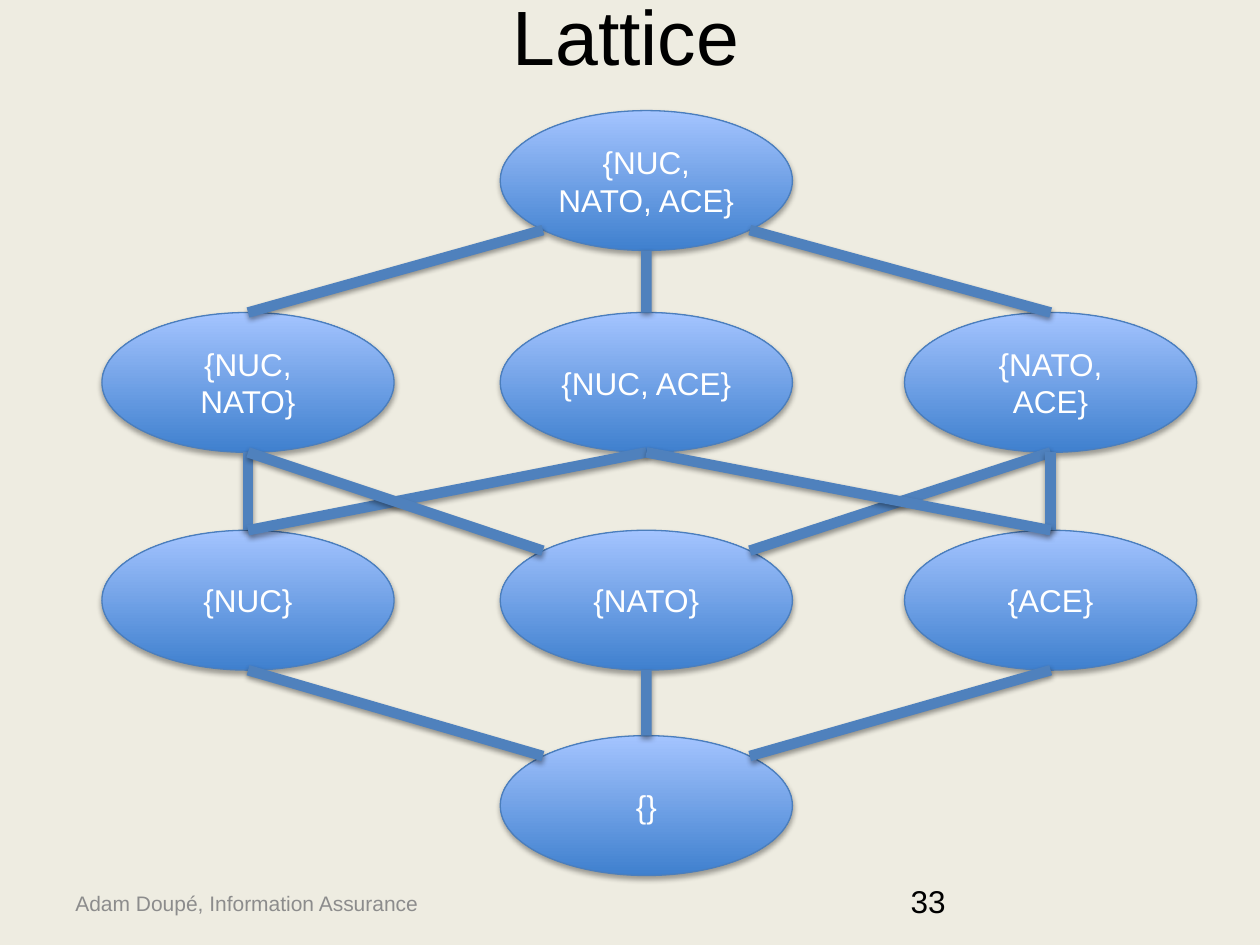
from lxml import etree
from pptx import Presentation
from pptx.dml.color import RGBColor
from pptx.enum.shapes import MSO_CONNECTOR, MSO_SHAPE
from pptx.enum.text import MSO_ANCHOR, PP_ALIGN
from pptx.oxml.ns import qn
from pptx.util import Cm, Pt

OVAL = MSO_SHAPE.OVAL
STRAIGHT = MSO_CONNECTOR.STRAIGHT
TOP_ANCHOR, MIDDLE_ANCHOR = MSO_ANCHOR.TOP, MSO_ANCHOR.MIDDLE
LEFT, CENTER = PP_ALIGN.LEFT, PP_ALIGN.CENTER

FONT = "Arial"

# text, (left, top, width, height) in cm, size, colour, alignment, anchor
TEXTS = [
    ("Adam Doupé, Information Assurance", (1.27, 17.7, 10.82, 1.02), 12, "8C8C8C", LEFT, MIDDLE_ANCHOR),
    ("Lattice", (1.19, -0.89, 22.86, 3.18), 44, "000000", CENTER, MIDDLE_ANCHOR),
    ("33", (18.11, 17.65, 5.92, 1.02), 18, "000000", LEFT, TOP_ANCHOR),
]

COLUMN_CENTERS = [5.0, 13.03, 21.18]
ROW_TOPS = [2.23, 6.3, 10.69, 14.83]
NODE_WIDTH, NODE_HEIGHT = 5.89, 2.82

# label: (column, row)
NODES = {
    "{NUC, NATO, ACE}": (1, 0),
    "{}": (1, 3),
    "{NUC}": (0, 2),
    "{NATO}": (1, 2),
    "{ACE}": (2, 2),
    "{NUC, NATO}": (0, 1),
    "{NUC, ACE}": (1, 1),
    "{NATO, ACE}": (2, 1),
}

# Points on an ellipse, as parts of its width and height from the centre
DIAGONAL = 0.354
SITES = {
    "top": (0, -0.5),
    "bottom": (0, 0.5),
    "top left": (-DIAGONAL, -DIAGONAL),
    "top right": (DIAGONAL, -DIAGONAL),
    "bottom left": (-DIAGONAL, DIAGONAL),
    "bottom right": (DIAGONAL, DIAGONAL),
}

# subset, its site, superset, its site
EDGES = [
    ("{}", "top left", "{NUC}", "bottom"),
    ("{}", "top", "{NATO}", "bottom"),
    ("{}", "top right", "{ACE}", "bottom"),
    ("{NUC}", "top", "{NUC, NATO}", "bottom"),
    ("{NUC}", "top", "{NUC, ACE}", "bottom"),
    ("{NATO}", "top left", "{NUC, NATO}", "bottom"),
    ("{NATO}", "top right", "{NATO, ACE}", "bottom"),
    ("{ACE}", "top", "{NATO, ACE}", "bottom"),
    ("{ACE}", "top", "{NUC, ACE}", "bottom"),
    ("{NUC, NATO}", "top", "{NUC, NATO, ACE}", "bottom left"),
    ("{NUC, ACE}", "top", "{NUC, NATO, ACE}", "bottom"),
    ("{NATO, ACE}", "top", "{NUC, NATO, ACE}", "bottom right"),
]


def color(value):
    return RGBColor.from_string(value)


def write(shape, text, size, text_color, alignment, anchor):
    frame = shape.text_frame
    frame.word_wrap = True
    frame.vertical_anchor = anchor
    paragraph = frame.paragraphs[0]
    paragraph.alignment = alignment
    run = paragraph.add_run()
    run.text = text
    run.font.name = FONT
    run.font.size = Pt(size)
    run.font.color.rgb = color(text_color)


def set_line(shape, line_color, width):
    shape.line.color.rgb = color(line_color)
    shape.line.width = Pt(width)


def drop_shadow(shape, distance, opacity):
    """Add a downward shadow; call it after fill and line are set."""
    effects = etree.SubElement(shape._element.spPr, qn("a:effectLst"))
    shadow = etree.SubElement(
        effects, qn("a:outerShdw"), blurRad=str(Pt(3.1)), dist=str(Pt(distance)),
        dir=str(90 * 60000), rotWithShape="0")
    black = etree.SubElement(shadow, qn("a:srgbClr"), val="000000")
    etree.SubElement(black, qn("a:alpha"), val=str(opacity * 1000))


def add_node(slide, label, column, row):
    shape = slide.shapes.add_shape(
        OVAL, Cm(COLUMN_CENTERS[column] - NODE_WIDTH / 2), Cm(ROW_TOPS[row]),
        Cm(NODE_WIDTH), Cm(NODE_HEIGHT))
    shape.fill.gradient()
    shape.fill.gradient_angle = 90
    for stop, stop_color in zip(shape.fill.gradient_stops, ("3F80CE", "A4C4FF")):
        stop.color.rgb = color(stop_color)
        stop.position = 0 if stop_color == "3F80CE" else 1
    set_line(shape, "4B7EBC", 0.75)
    drop_shadow(shape, 1.8, 35)
    write(shape, label, 18, "FFFFFF", CENTER, MIDDLE_ANCHOR)
    return shape


def site_point(label, site):
    column, row = NODES[label]
    across, down = SITES[site]
    return (Cm(COLUMN_CENTERS[column] + across * NODE_WIDTH),
            Cm(ROW_TOPS[row] + (0.5 + down) * NODE_HEIGHT))


def add_edge(slide, shapes, subset, subset_site, superset, superset_site):
    connector = slide.shapes.add_connector(
        STRAIGHT, *site_point(subset, subset_site), *site_point(superset, superset_site))
    if subset_site == "top":
        connector.begin_connect(shapes[subset], 0)
    set_line(connector, "4F81BD", 6)
    drop_shadow(connector, 1.6, 38)


def main():
    presentation = Presentation()
    presentation.slide_width, presentation.slide_height = Cm(25.4), Cm(19.05)
    slide = presentation.slides.add_slide(presentation.slide_layouts[6])
    slide.background.fill.solid()
    slide.background.fill.fore_color.rgb = color("EEECE1")

    for text, box, *style in TEXTS:
        write(slide.shapes.add_textbox(*map(Cm, box)), text, *style)
    shapes = {label: add_node(slide, label, *place) for label, place in NODES.items()}
    for edge in EDGES:
        add_edge(slide, shapes, *edge)

    presentation.save("out.pptx")


if __name__ == "__main__":
    main()
